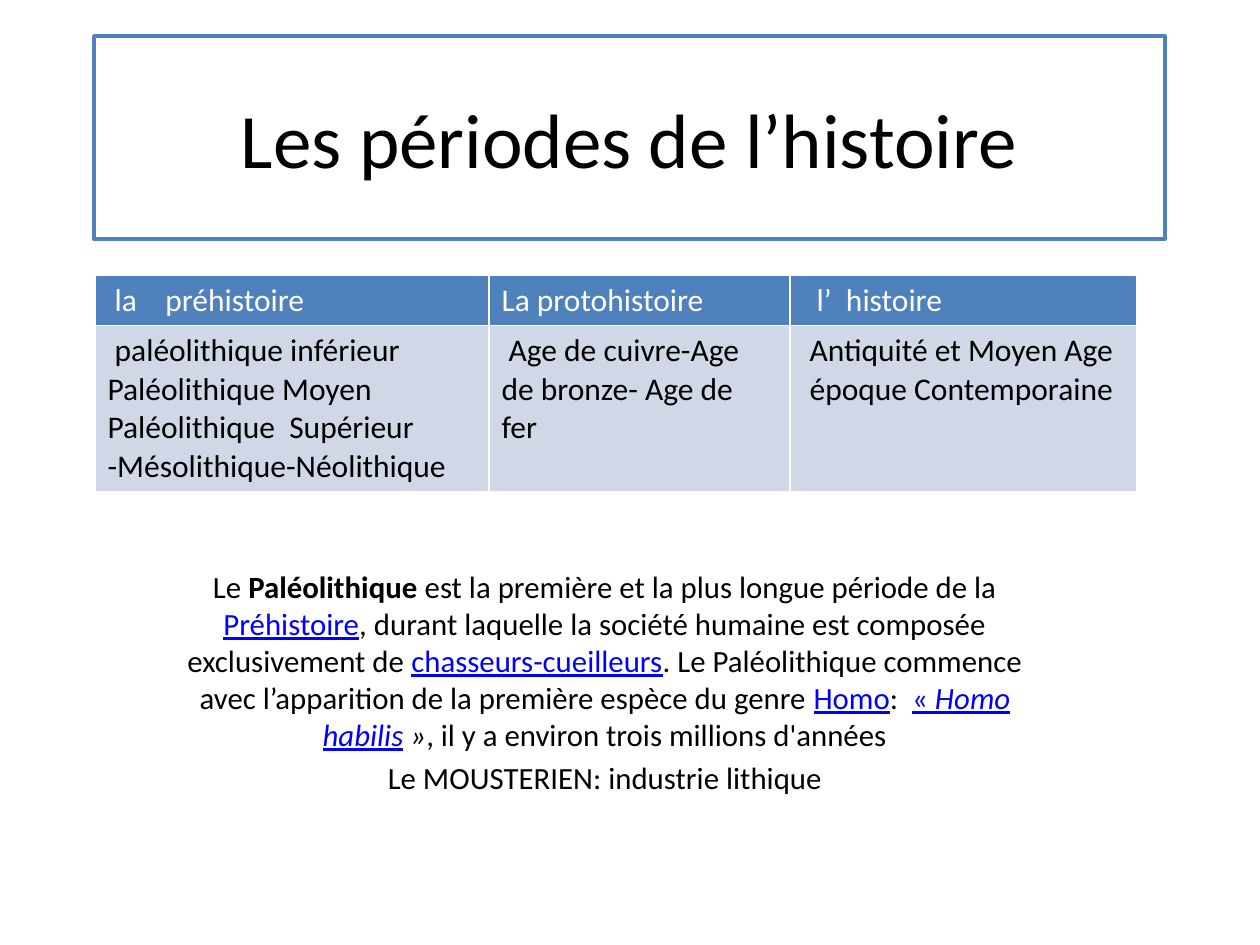
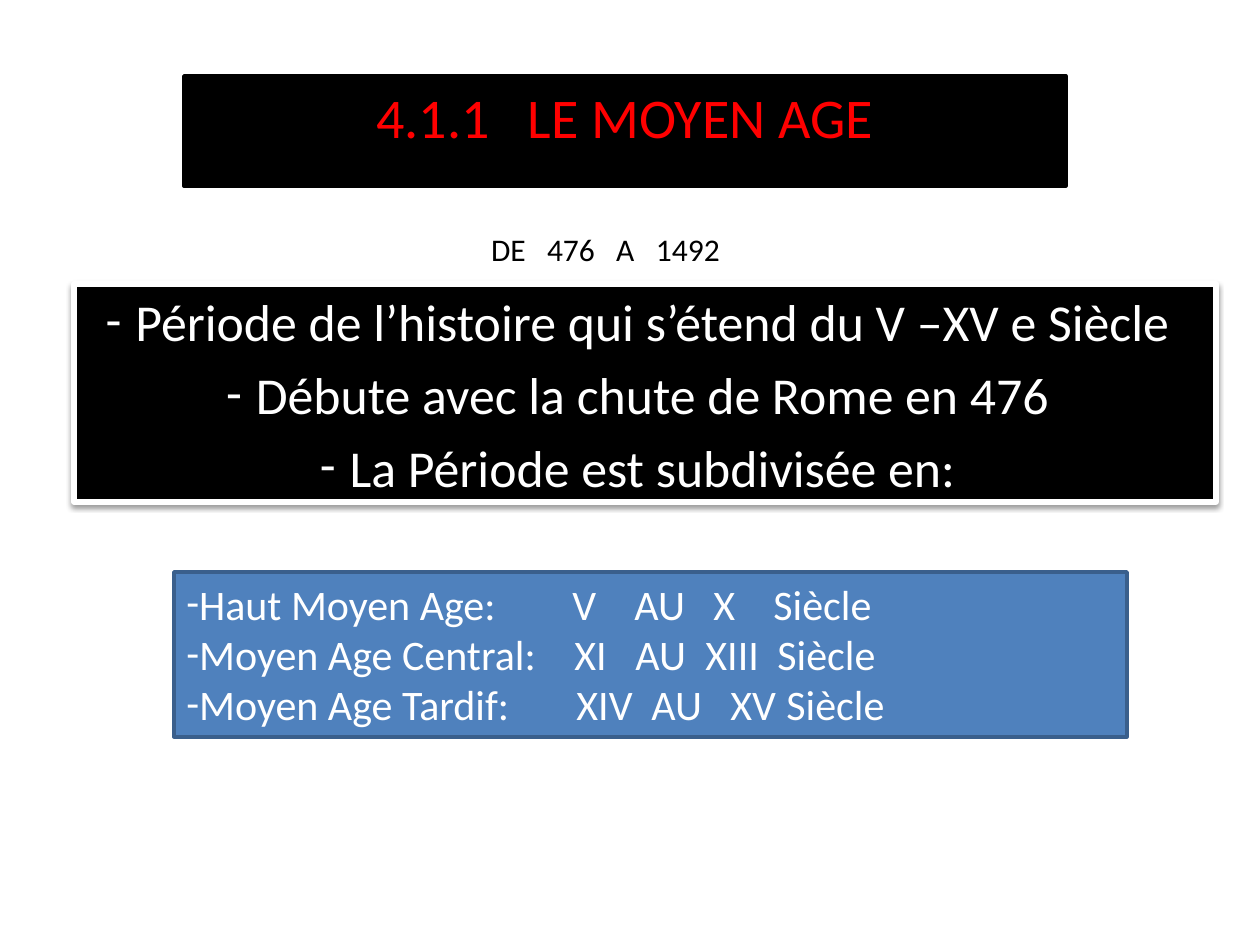
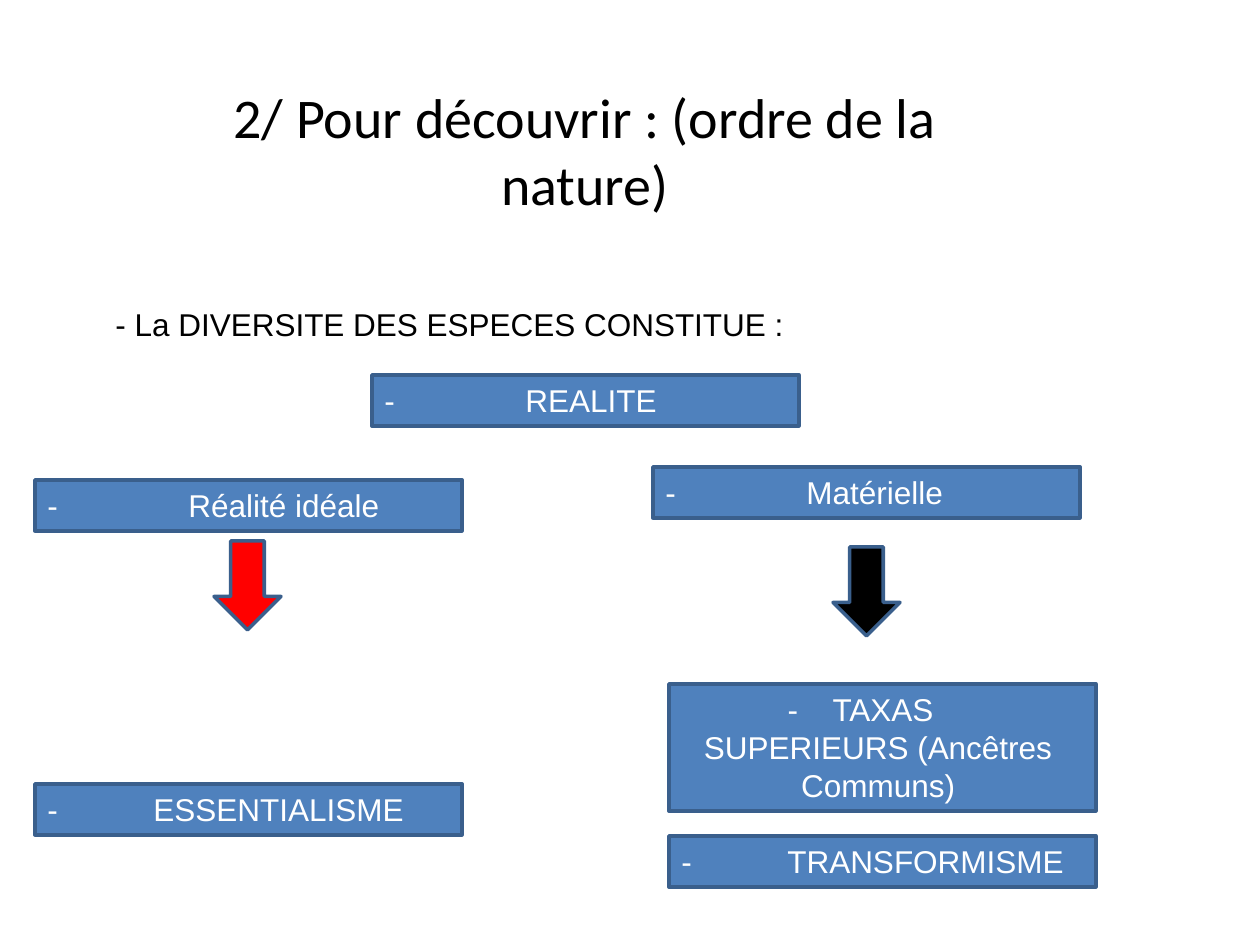
from lxml import etree
from pptx import Presentation
from pptx.dml.color import RGBColor
from pptx.enum import shapes, text
from pptx.oxml import ns
from pptx import util as u

PX_PER_INCH = 126
BLACK = RGBColor(0x00, 0x00, 0x00)
WHITE = RGBColor(0xFF, 0xFF, 0xFF)
RED = RGBColor(0xFF, 0x00, 0x00)
BLUE = RGBColor(0x4F, 0x81, 0xBD)
DARK_BLUE = RGBColor(0x3A, 0x5F, 0x8C)
PALE_BLUE = RGBColor(0xD0, 0xD8, 0xE8)
LINK = {"color": RGBColor(0x00, 0x00, 0xFF), "underline": True}

CENTER = text.PP_ALIGN.CENTER
TOP = text.MSO_ANCHOR.TOP
MIDDLE = text.MSO_ANCHOR.MIDDLE
RECTANGLE = shapes.MSO_SHAPE.RECTANGLE
DOWN_ARROW = shapes.MSO_SHAPE.DOWN_ARROW


def px(length):
    return round(length * u.Inches(1) / PX_PER_INCH)


def place(*lengths):
    return [px(length) for length in lengths]


def add_xml(parent, tag, **attributes):
    return etree.SubElement(parent, ns.qn(tag), attributes)


def format_span(span, size, font, color, bold=False, italic=False, underline=False):
    span.font.size = u.Pt(size)
    span.font.name = font
    span.font.color.rgb = color
    span.font.bold = bold
    span.font.italic = italic
    span.font.underline = underline


def write(frame, paras, size=18, font="Calibri", color=BLACK, align=None,
          gap=0, bullet=None, stops=()):
    """Fill a frame; a para is a string or a list of (text, format) spans.

    gap is the space between paras as a share of the size; stops holds one
    tuple of tab positions for each para.
    """
    for index, content in enumerate(paras):
        para = frame.add_paragraph() if index else frame.paragraphs[0]
        para.alignment = align
        if index and gap:
            para.space_before = u.Pt(size * gap)
        spans = [(content, {})] if isinstance(content, str) else content
        for words, changes in spans:
            span = para.add_run()
            span.text = words
            format_span(span, **{"size": size, "font": font, "color": color, **changes})
        properties = para._p.get_or_add_pPr()
        if bullet:
            add_xml(properties, "a:buFont", typeface=font)
            add_xml(properties, "a:buChar", char=bullet)
        if stops:
            tabs = add_xml(properties, "a:tabLst")
            for stop in stops[index]:
                add_xml(tabs, "a:tab", pos=str(px(stop)), algn="l")


def add_text(page, area, paras, inset=None, grow=False, **style):
    box = page.shapes.add_textbox(*place(*area))
    frame = box.text_frame
    frame.word_wrap = True
    if inset:
        frame.margin_left = px(inset)
    if grow:
        frame.auto_size = text.MSO_AUTO_SIZE.SHAPE_TO_FIT_TEXT
    write(frame, paras, **style)


def add_box(page, area, paras=(), kind=RECTANGLE, fill=BLUE, line=DARK_BLUE,
            width=2, anchor=TOP, grow=False, **style):
    box = page.shapes.add_shape(kind, *place(*area))
    box.shadow.inherit = False
    box.fill.solid()
    box.fill.fore_color.rgb = fill
    box.line.color.rgb = line
    box.line.width = u.Pt(width)
    frame = box.text_frame
    frame.word_wrap = True
    frame.vertical_anchor = anchor
    if grow:
        frame.auto_size = text.MSO_AUTO_SIZE.SHAPE_TO_FIT_TEXT
    write(frame, paras, **style)
    return box


def add_shadow(box):
    effects = box._element.spPr.find(ns.qn("a:effectLst"))
    shadow = add_xml(effects, "a:outerShdw", blurRad=str(u.Pt(3.1)),
                     dist=str(u.Pt(1.6)), dir="5400000", rotWithShape="0")
    color = add_xml(shadow, "a:srgbClr", val=str(BLACK))
    add_xml(color, "a:alpha", val="38000")


def add_periods_table(page, left, top, widths, heights, rows):
    frame = page.shapes.add_table(len(rows), len(widths),
                                  *place(left, top, sum(widths), sum(heights)))
    table = frame.table
    for column, width in zip(table.columns, widths):
        column.width = px(width)
    for index, (height, contents) in enumerate(zip(heights, rows)):
        table.rows[index].height = px(height)
        for cell, paras in zip(table.rows[index].cells, contents):
            cell.fill.solid()
            cell.fill.fore_color.rgb = PALE_BLUE if index else BLUE
            write(cell.text_frame, paras, color=BLACK if index else WHITE)


def add_label(page, left, top, words, stop):
    """A blue one-line box: a dash, then the words at the tab stop."""
    add_box(page, (left, top, 427, 51), [f"-\t{words}"], font="Arial",
            color=WHITE, stops=[(stop,)], grow=True)


def build_periods(page):
    add_box(page, (94, 36, 1071, 203), ["Les périodes de l’histoire"], fill=WHITE,
            line=BLUE, anchor=MIDDLE, size=44, align=CENTER)
    definition = [
        ("Le ", {}),
        ("Paléolithique", {"bold": True}),
        (" est la première et la plus longue période de la ", {}),
        ("Préhistoire", LINK),
        (", durant laquelle la société humaine est composée exclusivement de ", {}),
        ("chasseurs-cueilleurs", LINK),
        (". Le Paléolithique commence avec l’apparition de la première espèce du genre ", {}),
        ("Homo", LINK),
        (":  ", {}),
        ("« ", LINK),
        ("Homo habilis", {**LINK, "italic": True}),
        (" »", {"italic": True}),
        (", il y a environ trois millions d'années", {}),
    ]
    add_text(page, (164, 562, 882, 242),
             [definition, "Le MOUSTERIEN: industrie lithique"],
             size=17.6, align=CENTER, gap=0.2)
    add_periods_table(page, 95, 275, (394, 301, 347), (50, 166), [
        [[" la    préhistoire"], ["La protohistoire"], ["  l’  histoire"]],
        [[" paléolithique inférieur", "Paléolithique Moyen",
          "Paléolithique  Supérieur", "-Mésolithique-Néolithique"],
         [" Age de cuivre-Age de bronze- Age de  fer"],
         [" Antiquité et Moyen Age", " époque Contemporaine"]],
    ])


def build_middle_ages(page):
    summary = add_box(page, (74, 284, 1142, 218), [
        "Période de l’histoire qui s’étend du V –XV e Siècle",
        "Débute avec la chute de Rome en 476",
        "La Période est subdivisée en:",
    ], fill=BLACK, line=WHITE, width=3, size=29.6, color=WHITE, align=CENTER,
        gap=0.2, bullet="-")
    add_shadow(summary)
    add_box(page, (184, 76, 882, 110), ["4.1.1   LE MOYEN AGE"], fill=BLACK,
            line=BLACK, size=32, color=RED, align=CENTER)
    add_text(page, (422, 224, 407, 51), ["DE\t476\tA\t1492"], inset=69,
             stops=[(56, 125, 165)], grow=True)
    add_box(page, (174, 572, 953, 165), [
        "Haut Moyen Age:\tV\tAU\tX\tSiècle",
        "Moyen Age Central:\tXI\tAU\tXIII\tSiècle",
        "Moyen Age Tardif:\tXIV\tAU\tXV\tSiècle",
    ], size=24, color=WHITE, bullet="-", grow=True,
        stops=[(386, 448, 527, 587), (388, 449, 519, 591), (390, 465, 544, 600)])


def build_order_of_nature(page):
    add_text(page, (144, 76, 882, 248), ["2/ Pour découvrir : (ordre de la nature)"],
             size=32, align=CENTER)
    add_text(page, (103, 299, 1101, 51), ["- La DIVERSITE DES ESPECES CONSTITUE :"],
             font="Arial", grow=True)
    for left, top, words, stop in [
        (372, 375, "REALITE", 141),
        (35, 480, "Réalité idéale", 141),
        (653, 467, "Matérielle", 141),
        (35, 784, "ESSENTIALISME", 106),
        (669, 836, "TRANSFORMISME", 106),
    ]:
        add_label(page, left, top, words, stop)
    for left, top, color in [(214, 541, RED), (833, 547, BLACK)]:
        add_box(page, (left, top, 67, 89), kind=DOWN_ARROW, fill=color)
    add_box(page, (669, 684, 427, 127),
            ["-    TAXAS      SUPERIEURS (Ancêtres  Communs) "],
            font="Arial", color=WHITE, align=CENTER, grow=True)


def main():
    deck = Presentation()
    deck.slide_width, deck.slide_height = u.Inches(10), u.Inches(7.5)
    blank = deck.slide_layouts[6]
    for build in (build_periods, build_middle_ages, build_order_of_nature):
        build(deck.slides.add_slide(blank))
    deck.save("out.pptx")


if __name__ == "__main__":
    main()
